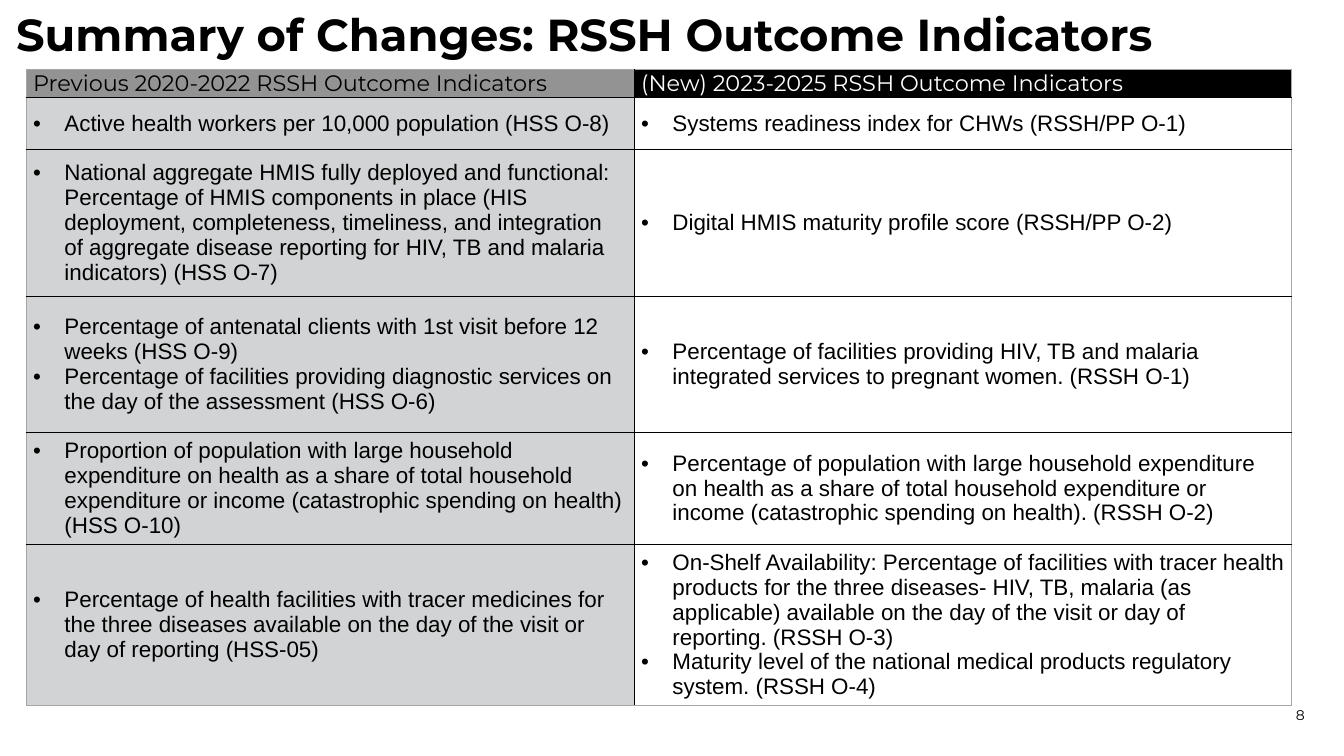
"""Build the slide comparing previous and new RSSH outcome indicators."""
from dataclasses import dataclass

from lxml import etree
from pptx import Presentation, util as u
from pptx.dml.color import RGBColor
from pptx.enum import text
from pptx.oxml.ns import qn

WIDTH, HEIGHT = u.Inches(13.33), u.Inches(7.5)


@dataclass(frozen=True)
class Theme:
    """Colours, fonts and type sizes of the slide."""
    ink: str = "000000"
    paper: str = "FFFFFF"
    old_header: str = "939393"
    old_body: str = "D1D3D4"
    frame: str = "A6A6A6"
    heading_font: str = "Montserrat"
    body_font: str = "Arial"
    title_size: int = 32
    table_size: int = 16
    number_size: int = 10


THEME = Theme()
TITLE = "Summary of Changes: RSSH Outcome Indicators"
HEADERS = ("Previous 2020-2022 RSSH Outcome Indicators",
           "(New) 2023-2025 RSSH Outcome Indicators")
COLUMN_SHARES = (45.24, 48.91)
HEADER_SHARE = 3.73
INDICATORS = (
    (6.8,
     ["Active health workers per 10,000 population (HSS O-8)"],
     ["Systems readiness index for CHWs (RSSH/PP O-1)"]),
    (19.47,
     ["National aggregate HMIS fully deployed and functional: Percentage of HMIS "
      "components in place (HIS deployment, completeness, timeliness, and integration "
      "of aggregate disease reporting for HIV, TB and malaria indicators) (HSS O-7)"],
     ["Digital HMIS maturity profile score (RSSH/PP O-2)"]),
    (18,
     ["Percentage of antenatal clients with 1st visit before 12 weeks (HSS O-9)",
      "Percentage of facilities providing diagnostic services on the day of the "
      "assessment (HSS O-6)"],
     ["Percentage of facilities providing HIV, TB and malaria integrated services to "
      "pregnant women. (RSSH O-1)"]),
    (14.8,
     ["Proportion of population with large household expenditure on health as a share "
      "of total household expenditure or income (catastrophic spending on health) "
      "(HSS O-10)"],
     ["Percentage of population with large household expenditure on health as a share "
      "of total household expenditure or income (catastrophic spending on health). "
      "(RSSH O-2)"]),
    (19.07,
     ["Percentage of health facilities with tracer medicines for the three diseases "
      "available on the day of the visit or day of reporting (HSS-05)"],
     ["On-Shelf Availability: Percentage of facilities with tracer health products for "
      "the three diseases- HIV, TB, malaria (as applicable) available on the day of "
      "the visit or day of reporting. (RSSH O-3)",
      "Maturity level of the national medical products regulatory system. (RSSH O-4)"]),
)


def across(share):
    """Turn a percentage of the slide width into a length."""
    return u.Emu(round(WIDTH * share / 100))


def down(share):
    """Turn a percentage of the slide height into a length."""
    return u.Emu(round(HEIGHT * share / 100))


def style(paragraph, size, font, color=THEME.ink, bold=False):
    """Format every run of a paragraph."""
    for run in paragraph.runs:
        run.font.size = u.Pt(size)
        run.font.name = font
        run.font.bold = bold
        run.font.color.rgb = RGBColor.from_string(color)


def clear_margins(frame):
    """Remove the insets of a text frame and wrap its words."""
    frame.margin_left = frame.margin_right = frame.margin_top = frame.margin_bottom = 0
    frame.word_wrap = True


def add_title(slide):
    """Place and format the title placeholder."""
    title = slide.shapes.title
    title.left, title.top = across(1.2), down(1.73)
    title.width, title.height = across(94.15), down(6.8)
    frame = title.text_frame
    frame.text = TITLE
    clear_margins(frame)
    frame.auto_size = text.MSO_AUTO_SIZE.NONE
    frame.vertical_anchor = text.MSO_ANCHOR.TOP
    heading = frame.paragraphs[0]
    heading.alignment = text.PP_ALIGN.LEFT
    heading.line_spacing = 0.9
    style(heading, THEME.title_size, THEME.heading_font, bold=True)


def add_page_number(slide, number):
    """Write the page number at the bottom right."""
    frame = slide.shapes.add_textbox(
        across(89.72), down(90.4), across(7.35), down(5.33)).text_frame
    frame.text = str(number)
    clear_margins(frame)
    frame.vertical_anchor = text.MSO_ANCHOR.BOTTOM
    frame.paragraphs[0].alignment = text.PP_ALIGN.RIGHT
    style(frame.paragraphs[0], THEME.number_size, THEME.heading_font)


def rule_cell(cell, outer_sides):
    """Draw black inner rules and a thin grey outer frame."""
    properties = cell._tc.get_or_add_tcPr()
    for side in "LRTB":
        outer = side in outer_sides
        line = etree.SubElement(properties, qn(f"a:ln{side}"),
                                w=str(u.Pt(0.5 if outer else 1)))
        fill = etree.SubElement(line, qn("a:solidFill"))
        etree.SubElement(fill, qn("a:srgbClr"), val=THEME.frame if outer else THEME.ink)


def add_bullet(paragraph):
    """Give a paragraph a hanging round bullet."""
    properties = paragraph._p.get_or_add_pPr()
    indent = u.Inches(0.31)
    properties.set("marL", str(indent))
    properties.set("indent", str(-indent))
    etree.SubElement(properties, qn("a:buFont"), typeface=THEME.body_font)
    etree.SubElement(properties, qn("a:buChar"), char="•")


def fill_cell(cell, lines, background, outer_sides, font, color=THEME.ink, bulleted=True):
    """Write and format the lines of one table cell."""
    rule_cell(cell, outer_sides)
    cell.fill.solid()
    cell.fill.fore_color.rgb = RGBColor.from_string(background)
    cell.margin_left = cell.margin_right = u.Inches(0.07)
    cell.margin_top = cell.margin_bottom = 0
    cell.vertical_anchor = text.MSO_ANCHOR.MIDDLE
    cell.text_frame.text = "\n".join(lines)
    for paragraph in cell.text_frame.paragraphs:
        if bulleted:
            add_bullet(paragraph)
        style(paragraph, THEME.table_size, font, color)


def add_indicator_table(slide):
    """Set the previous indicators beside the new ones."""
    row_shares = [HEADER_SHARE] + [share for share, *_ in INDICATORS]
    table = slide.shapes.add_table(
        len(row_shares), len(COLUMN_SHARES), across(1.95), down(9.2),
        across(sum(COLUMN_SHARES)), down(sum(row_shares))).table
    table.first_row = table.horz_banding = False
    for column, share in zip(table.columns, COLUMN_SHARES):
        column.width = across(share)
    for row, share in zip(table.rows, row_shares):
        row.height = down(share)

    header_looks = ((THEME.old_header, THEME.ink), (THEME.ink, THEME.paper))
    body_fills = (THEME.old_body, THEME.paper)
    for index, side in enumerate("LR"):
        background, color = header_looks[index]
        fill_cell(table.cell(0, index), [HEADERS[index]], background, side + "T",
                  THEME.heading_font, color, bulleted=False)
        for number, (_, *periods) in enumerate(INDICATORS, start=1):
            edges = side + ("B" if number == len(INDICATORS) else "")
            fill_cell(table.cell(number, index), periods[index], body_fills[index],
                      edges, THEME.body_font)


def main():
    """Assemble and save the slide."""
    deck = Presentation()
    deck.slide_width, deck.slide_height = WIDTH, HEIGHT
    slide = deck.slides.add_slide(deck.slide_layouts.get_by_name("Title Only"))
    add_page_number(slide, 8)
    add_title(slide)
    add_indicator_table(slide)
    deck.save("out.pptx")


if __name__ == "__main__":
    main()
